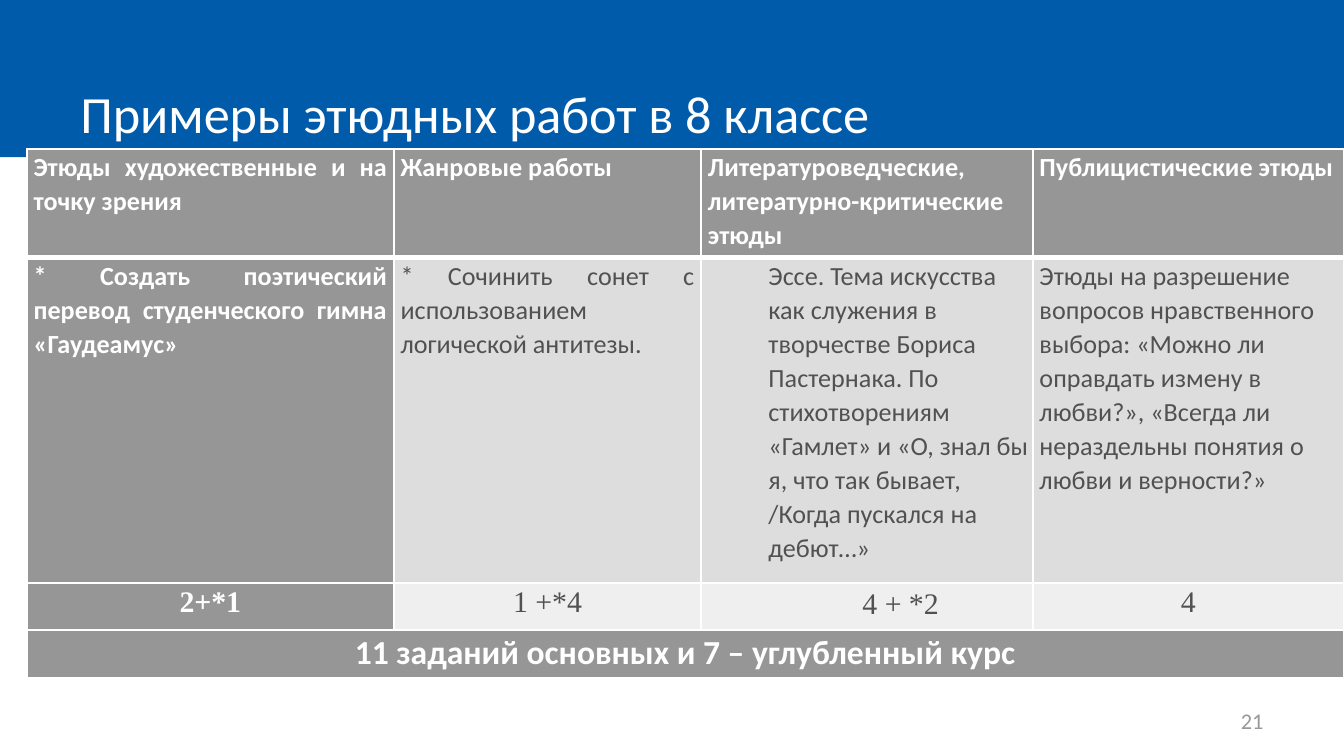
from lxml import etree
from pptx import Presentation
from pptx.dml.color import RGBColor
from pptx.enum.shapes import MSO_SHAPE
from pptx.enum.text import MSO_ANCHOR, PP_ALIGN
from pptx.oxml.ns import qn
from pptx.util import Pt

RECTANGLE = MSO_SHAPE.RECTANGLE
LEFT, CENTER, RIGHT, JUSTIFY = (
    PP_ALIGN.LEFT, PP_ALIGN.CENTER, PP_ALIGN.RIGHT, PP_ALIGN.JUSTIFY)
BOTTOM, MIDDLE = MSO_ANCHOR.BOTTOM, MSO_ANCHOR.MIDDLE

COLORS = {
    "white": "FFFFFF",
    "blue": "005CAB",
    "gray": "969696",
    "text": "515151",
    "band": "DDDDDD",
    "light": "EFEFEF",
    "number": "989898",
}


def color(name):
    return RGBColor.from_string(COLORS[name])


def write(frame, text, size=14, ink="white", bold=False, font="Calibri",
          align=LEFT, spacing=None, indent=0):
    para = frame.paragraphs[0]
    para.alignment = align
    if spacing:
        para.line_spacing = spacing
    if indent:
        properties = para._p.get_or_add_pPr()
        properties.set("marL", str(Pt(indent)))
        properties.set("indent", "0")
    span = para.add_run()
    span.text = text
    span.font.name = font
    span.font.size = Pt(size)
    span.font.bold = bold
    span.font.color.rgb = color(ink)


class SlideBuilder:
    def __init__(self, page):
        self.page = page

    def band(self, left, top, width, height, fill):
        box = self.page.shapes.add_shape(
            RECTANGLE, Pt(left), Pt(top), Pt(width), Pt(height))
        box.shadow.inherit = False
        box.fill.solid()
        box.fill.fore_color.rgb = color(fill)
        box.line.fill.background()

    def text(self, left, top, width, height, text, anchor, **style):
        box = self.page.shapes.add_textbox(
            Pt(left), Pt(top), Pt(width), Pt(height))
        box.text_frame.word_wrap = True
        box.text_frame.vertical_anchor = anchor
        write(box.text_frame, text, **style)

    def table(self, left, top, widths, heights):
        frame = self.page.shapes.add_table(
            len(heights), len(widths), Pt(left), Pt(top),
            Pt(sum(widths)), Pt(sum(heights)))
        table = frame.table
        for column, width in zip(table.columns, widths):
            column.width = Pt(width)
        for row, height in zip(table.rows, heights):
            row.height = Pt(height)
        return table

    def borders(self, cell, top=1, bottom=1):
        properties = cell._tc.get_or_add_tcPr()
        for side, width in (("L", 1), ("R", 1), ("T", top), ("B", bottom)):
            line = etree.SubElement(
                properties, qn("a:ln" + side), w=str(Pt(width)))
            fill = etree.SubElement(line, qn("a:solidFill"))
            etree.SubElement(fill, qn("a:srgbClr"), val=COLORS["white"])

    def cell(self, cell, text, fill, inset, **style):
        cell.margin_left = cell.margin_right = Pt(inset)
        cell.margin_top = cell.margin_bottom = 0
        cell.fill.solid()
        cell.fill.fore_color.rgb = color(fill)
        write(cell.text_frame, text, **style)


def main():
    deck = Presentation()
    deck.slide_width, deck.slide_height = Pt(720), Pt(405)
    builder = SlideBuilder(deck.slides.add_slide(deck.slide_layouts[6]))

    # Title band
    builder.band(0, 0, 720, 84.2, "blue")
    builder.text(36, 13, 648, 67.7, "Примеры этюдных работ в 8 классе",
                 BOTTOM, size=28)

    # Table grid
    table = builder.table(14.4, 79.9, [196.6, 164.7, 177.6, 166.7],
                          [58.3, 174.2, 25.2, 25.4])
    for row in range(4):
        for column in range(4):
            builder.borders(table.cell(row, column),
                            top=3 if row == 1 else 1,
                            bottom=3 if row == 0 else 1)
    table.cell(3, 0).merge(table.cell(3, 3))

    # Table text: header, tasks and counts for each kind of work
    columns = [
        ("Этюды художественные и на точку зрения",
         "* Создать поэтический перевод студенческого гимна «Гаудеамус»",
         "2+*1"),
        ("Жанровые работы",
         "* Сочинить сонет с использованием логической антитезы.",
         "1 +*4"),
        ("Литературоведческие, литературно-критические этюды",
         "Эссе. Тема искусства как служения в творчестве Бориса Пастернака. "
         "По стихотворениям «Гамлет» и «О, знал бы я, что так "
         "бывает, /Когда пускался на дебют…»",
         "4 + *2"),
        ("Публицистические этюды",
         "Этюды на разрешение вопросов нравственного выбора: «Можно ли "
         "оправдать измену в любви?», «Всегда ли нераздельны понятия о "
         "любви и верности?»",
         "4"),
    ]
    for index, (heading, task, count) in enumerate(columns):
        first, essay = index == 0, index == 2
        ink = "white" if first else "text"
        indent = 36 if essay else 0
        builder.cell(table.cell(0, index), heading, "gray", 3.6, bold=True,
                     align=JUSTIFY if first else LEFT, spacing=1.07)
        builder.cell(table.cell(1, index), task, "gray" if first else "band",
                     0 if essay else 3.6, ink=ink, bold=first, indent=indent,
                     align=JUSTIFY if index < 2 else LEFT, spacing=1.07)
        builder.cell(table.cell(2, index), count, "gray" if first else "light",
                     5, size=16, font="Times New Roman", ink=ink, bold=first,
                     indent=indent, align=CENTER,
                     spacing=1.15 if essay else 1.07)

    # Total row
    builder.cell(table.cell(3, 0), "11 заданий основных и 7 – углубленный курс",
                 "gray", 5, size=18, bold=True, align=CENTER, spacing=1.07)

    # Page number
    builder.text(516.2, 375.1, 167.8, 21.6, "21", MIDDLE, size=12,
                 ink="number", align=RIGHT)

    deck.save("out.pptx")


if __name__ == "__main__":
    main()
